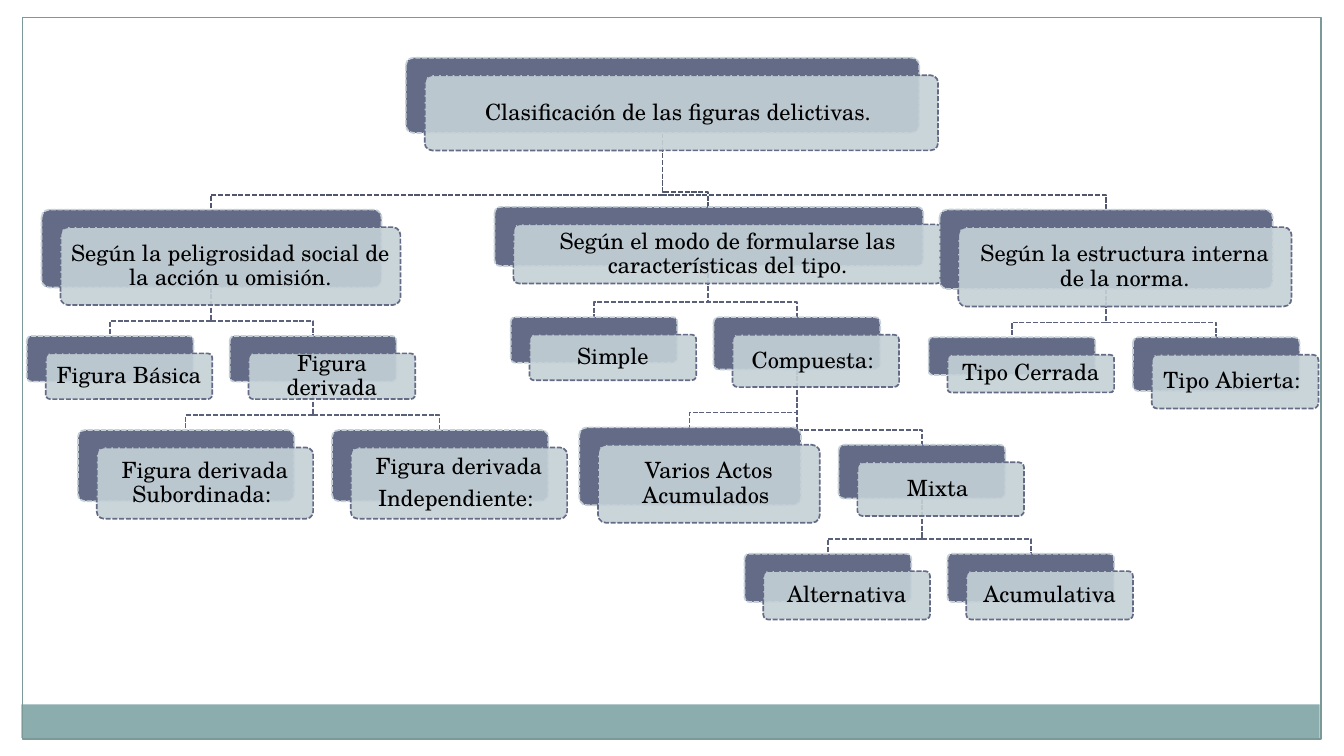
"""Builds a slide with a tree chart of the classes of criminal offence."""
from pptx import Presentation
from pptx.dml.color import RGBColor
from pptx.enum.dml import MSO_LINE
from pptx.enum.shapes import MSO_SHAPE
from pptx.enum.text import MSO_ANCHOR, PP_ALIGN
from pptx.oxml.ns import qn
from pptx.util import Pt
from lxml import etree

RECT = MSO_SHAPE.RECTANGLE
ROUND = MSO_SHAPE.ROUNDED_RECTANGLE
DASH = MSO_LINE.SQUARE_DOT
MIDDLE = MSO_ANCHOR.MIDDLE
CENTER = PP_ALIGN.CENTER

PX = 9144
WIDE = 1000 * PX
FONT = "TeX Gyre Schola"
DARK, PALE = "646B86", "C5D1D7"
TRUNK, TWIG = "50566B", "5B617A"
SHIFT_X, SHIFT_Y = 14, 13
BEND = 11

NODES = {
    "root": (None, 302, 43, 382, 56, "Clasificación de las figuras delictivas. "),
    "danger": ("root", 31, 156, 253, 58, "Según la peligrosidad social de la acción u omisión."),
    "basic": ("danger", 20, 250, 124, 34, "Figura Básica"),
    "derived": ("danger", 171, 250, 124, 34, "Figura derivada"),
    "sub": ("derived", 58, 320, 161, 53, "Figura derivada Subordinada: "),
    "free": ("derived", 247, 320, 161, 53, "Figura derivada\nIndependiente: "),
    "mode": ("root", 368, 154, 319, 44, "Según el modo de formularse las características del tipo."),
    "simple": ("mode", 380, 236, 124, 34, "Simple"),
    "compound": ("mode", 531, 236, 124, 39, "Compuesta: "),
    "mixed": ("compound", 624, 331, 124, 40, "Mixta "),
    "either": ("mixed", 554, 412, 124, 36, "Alternativa"),
    "both": ("mixed", 705, 412, 124, 36, "Acumulativa"),
    "acts": ("compound", 431, 318, 165, 58, "Varios Actos Acumulados "),
    "norm": ("root", 699, 156, 248, 59, "Según la estructura interna de la norma."),
    "closed": ("norm", 691, 251, 124, 28, "Tipo Cerrada"),
    "open": ("norm", 843, 251, 124, 40, "Tipo Abierta: "),
}


def color(code):
    return RGBColor.from_string(code)


def write(frame, text, size=12, font=FONT, ink="000000", pad=5):
    frame.word_wrap = True
    frame.vertical_anchor = MIDDLE
    frame.margin_left = frame.margin_right = pad * PX
    frame.margin_top = frame.margin_bottom = pad * PX
    for i, line in enumerate(text.split("\n")):
        para = frame.add_paragraph() if i else frame.paragraphs[0]
        para.alignment = CENTER
        para.line_spacing = 0.9
        para.space_after = Pt(4.2)
        run = para.add_run()
        run.text = line
        run.font.size = Pt(size)
        run.font.name = font
        run.font.color.rgb = color(ink)


class Chart:
    def __init__(self, slide):
        self.shapes = slide.shapes

    def style(self, shape, fill=None, line=None, width=0.9, dash=DASH, alpha=None):
        shape.shadow.inherit = False
        if fill:
            shape.fill.solid()
            shape.fill.fore_color.rgb = color(fill)
        else:
            shape.fill.background()
        if alpha:
            tone = shape.element.spPr.find(qn("a:solidFill")).find(qn("a:srgbClr"))
            etree.SubElement(tone, qn("a:alpha")).set("val", str(alpha * 1000))
        if line:
            shape.line.color.rgb = color(line)
            shape.line.width = Pt(width)
            shape.line.dash_style = dash
        else:
            shape.line.fill.background()

    def box(self, x, y, w, h, kind=RECT, **look):
        shape = self.shapes.add_shape(kind, x * PX, y * PX, w * PX, h * PX)
        if kind == ROUND:
            shape.adjustments[0] = 0.1
        self.style(shape, **look)

    def label(self, x, y, w, h, text):
        area = self.shapes.add_textbox(x * PX, y * PX, w * PX, h * PX)
        write(area.text_frame, text)

    def card(self, x, y, w, h, text):
        self.box(x, y, w, h, ROUND, fill=DARK, line=PALE)
        x, y = x + SHIFT_X, y + SHIFT_Y
        self.box(x, y, w, h, ROUND, fill=PALE, line=DARK, alpha=90)
        gap = round(h * 0.03)
        self.label(x + gap, y + gap, w - 2 * gap, h - 2 * gap, text)

    def link(self, start, end, ink):
        (x, y), (to_x, to_y) = start, end
        turn = to_y - BEND
        draft = self.shapes.build_freeform(x, y, scale=PX)
        draft.add_line_segments([(x, turn), (to_x, turn), end], close=False)
        self.style(draft.convert_to_shape(), line=ink)


def main():
    deck = Presentation()
    deck.slide_width, deck.slide_height = WIDE, WIDE * 9 // 16
    chart = Chart(deck.slides.add_slide(deck.slide_layouts[6]))
    chart.box(16, 524, 966, 25, fill="8CADAE")
    chart.box(17, 13, 966, 537, line="7C999A", width=0.75, dash=None)
    for head, x, y, w, h, text in reversed(NODES.values()):
        if head:
            _, left, top, wide, high, _ = NODES[head]
            ink = TRUNK if head == "root" else TWIG
            chart.link((left + wide // 2, top + high), (x + w // 2, y), ink)
    for head, *card in NODES.values():
        chart.card(*card)
    deck.save("out.pptx")


if __name__ == "__main__":
    main()
